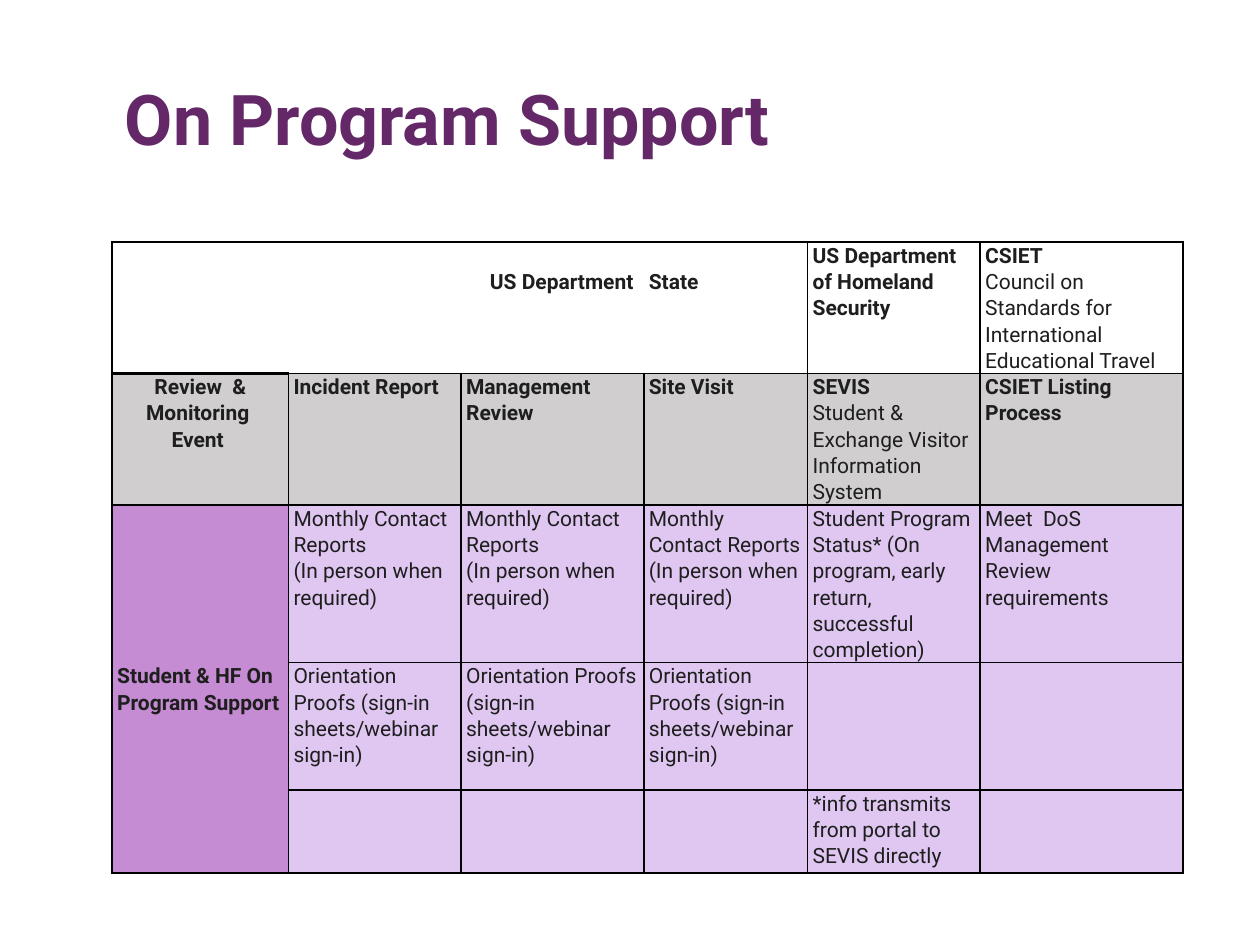
from dataclasses import dataclass

from lxml import etree
from pptx import Presentation
from pptx import util as u
from pptx.dml.color import RGBColor
from pptx.enum import text
from pptx.oxml import ns

FONT = "Roboto"
PURPLE = RGBColor(0x64, 0x28, 0x69)
INK = RGBColor(0x1E, 0x1E, 0x1E)
BLACK = RGBColor(0, 0, 0)
WHITE = RGBColor(0xFF, 0xFF, 0xFF)
GREY = RGBColor(0xD0, 0xCE, 0xCE)
ORCHID = RGBColor(0xC5, 0x8B, 0xD3)
LILAC = RGBColor(0xDF, 0xC7, 0xF1)

LEFT, RIGHT, CENTER = text.PP_ALIGN.LEFT, text.PP_ALIGN.RIGHT, text.PP_ALIGN.CENTER
COLUMN_WIDTHS = [1.4, 1.37, 1.45, 1.3, 1.37, 1.61]
ROW_HEIGHTS = [1.01, 0.76, 1.1, 1.01, 0.66]
LINE_HEIGHT = 0.21


@dataclass
class Entry:
    """Cell content: bold lines come first, then regular lines."""
    bold: tuple[str, ...] = ()
    plain: tuple[str, ...] = ()
    align: text.PP_ALIGN = LEFT
    top: float = 0


EMPTY = Entry()
CONTACT = Entry(plain=("Monthly Contact Reports", "(In person when required)"))
ORIENTATION = Entry(plain=("Orientation Proofs (sign-in sheets/webinar sign-in)",))

ROWS = [
    [EMPTY, EMPTY,
     Entry(("US Department ",), align=RIGHT, top=LINE_HEIGHT),
     Entry(("State",), top=LINE_HEIGHT),
     Entry(("US Department of Homeland Security",)),
     Entry(("CSIET",), ("Council on Standards for International Educational Travel",))],
    [Entry(("Review  & Monitoring ", "Event "), align=CENTER),
     Entry(("Incident Report",)),
     Entry(("Management Review",)),
     Entry(("Site Visit",)),
     Entry(("SEVIS",), ("Student & Exchange Visitor", "Information System")),
     Entry(("CSIET Listing Process",))],
    [EMPTY, CONTACT, CONTACT, CONTACT,
     Entry(plain=("Student Program Status* (On program, early return, "
                  "successful completion)",)),
     Entry(plain=("Meet  DoS Management Review requirements",))],
    [Entry(("Student & HF On Program Support",)),
     ORIENTATION, ORIENTATION, ORIENTATION, EMPTY, EMPTY],
    [EMPTY, EMPTY, EMPTY, EMPTY,
     Entry(plain=("*info transmits from portal to SEVIS directly",)), EMPTY],
]


def write(para, words: str, *, size: float, color: RGBColor, bold: bool = False,
          align: text.PP_ALIGN = LEFT, spacing: float = 1.0) -> None:
    para.alignment = align
    para.line_spacing = spacing
    span = para.add_run()
    span.text = words
    span.font.name = FONT
    span.font.size = u.Pt(size)
    span.font.bold = bold
    span.font.color.rgb = color


def fill_color(row: int, column: int) -> RGBColor:
    if row < 2:
        return (WHITE, GREY)[row]
    return ORCHID if column == 0 else LILAC


def edge_widths(row: int, column: int) -> dict[str, float]:
    """Line width of each cell edge in points; 0 hides the edge."""
    widths = dict.fromkeys("LRTB", 1.0)
    if row == 0:  # the first four header cells read as one
        widths["L"] = 0 if 0 < column < 4 else 1
        widths["R"] = 0 if column < 3 else 1
    if column == 0:  # the lower three side cells read as one
        widths["T"] = {0: 1, 1: 1.5, 2: 1.5}.get(row, 0)
        widths["B"] = {0: 1.5, 1: 1.5, 4: 1}.get(row, 0)
    return widths


def draw_borders(cell, widths: dict[str, float]) -> None:
    properties = cell._tc.get_or_add_tcPr()
    for side, width in widths.items():
        line = etree.SubElement(properties, ns.qn(f"a:ln{side}"), w=str(u.Pt(width)))
        if width:
            solid = etree.SubElement(line, ns.qn("a:solidFill"))
            etree.SubElement(solid, ns.qn("a:srgbClr"), val=str(BLACK))
        else:
            etree.SubElement(line, ns.qn("a:noFill"))


def draw_cell(cell, entry: Entry, row: int, column: int) -> None:
    draw_borders(cell, edge_widths(row, column))
    cell.fill.solid()
    cell.fill.fore_color.rgb = fill_color(row, column)
    cell.margin_left = cell.margin_right = u.Inches(0.04)
    cell.margin_top, cell.margin_bottom = u.Inches(entry.top), 0
    cell.vertical_anchor = text.MSO_ANCHOR.TOP
    lines = [(words, True) for words in entry.bold]
    lines += [(words, False) for words in entry.plain]
    for index, (words, bold) in enumerate(lines):
        frame = cell.text_frame
        para = frame.add_paragraph() if index else frame.paragraphs[0]
        write(para, words, size=12, color=INK, bold=bold, align=entry.align, spacing=1.07)


def draw_title(page) -> None:
    box = page.shapes.title
    box.left, box.top = u.Inches(0.89), u.Inches(0.51)
    box.width, box.height = u.Inches(8.5), u.Inches(0.67)
    frame = box.text_frame
    frame.word_wrap = True
    frame.auto_size = text.MSO_AUTO_SIZE.NONE
    frame.vertical_anchor = text.MSO_ANCHOR.TOP
    frame.margin_top, frame.margin_bottom = u.Inches(0.09), 0
    write(frame.paragraphs[0], "On Program Support", size=40, color=PURPLE, bold=True)


def draw_table(page) -> None:
    table = page.shapes.add_table(
        len(ROW_HEIGHTS), len(COLUMN_WIDTHS), u.Inches(0.89), u.Inches(1.92),
        u.Inches(sum(COLUMN_WIDTHS)), u.Inches(sum(ROW_HEIGHTS))).table
    table.first_row = table.horz_banding = False
    for column, width in zip(table.columns, COLUMN_WIDTHS):
        column.width = u.Inches(width)
    for row, height in zip(table.rows, ROW_HEIGHTS):
        row.height = u.Inches(height)
    for row, entries in enumerate(ROWS):
        for column, entry in enumerate(entries):
            draw_cell(table.cell(row, column), entry, row, column)


def main() -> None:
    deck = Presentation()
    deck.slide_width, deck.slide_height = u.Inches(10), u.Inches(7.5)
    page = deck.slides.add_slide(deck.slide_layouts[5])  # title only
    draw_title(page)
    draw_table(page)
    deck.save("out.pptx")


if __name__ == "__main__":
    main()
